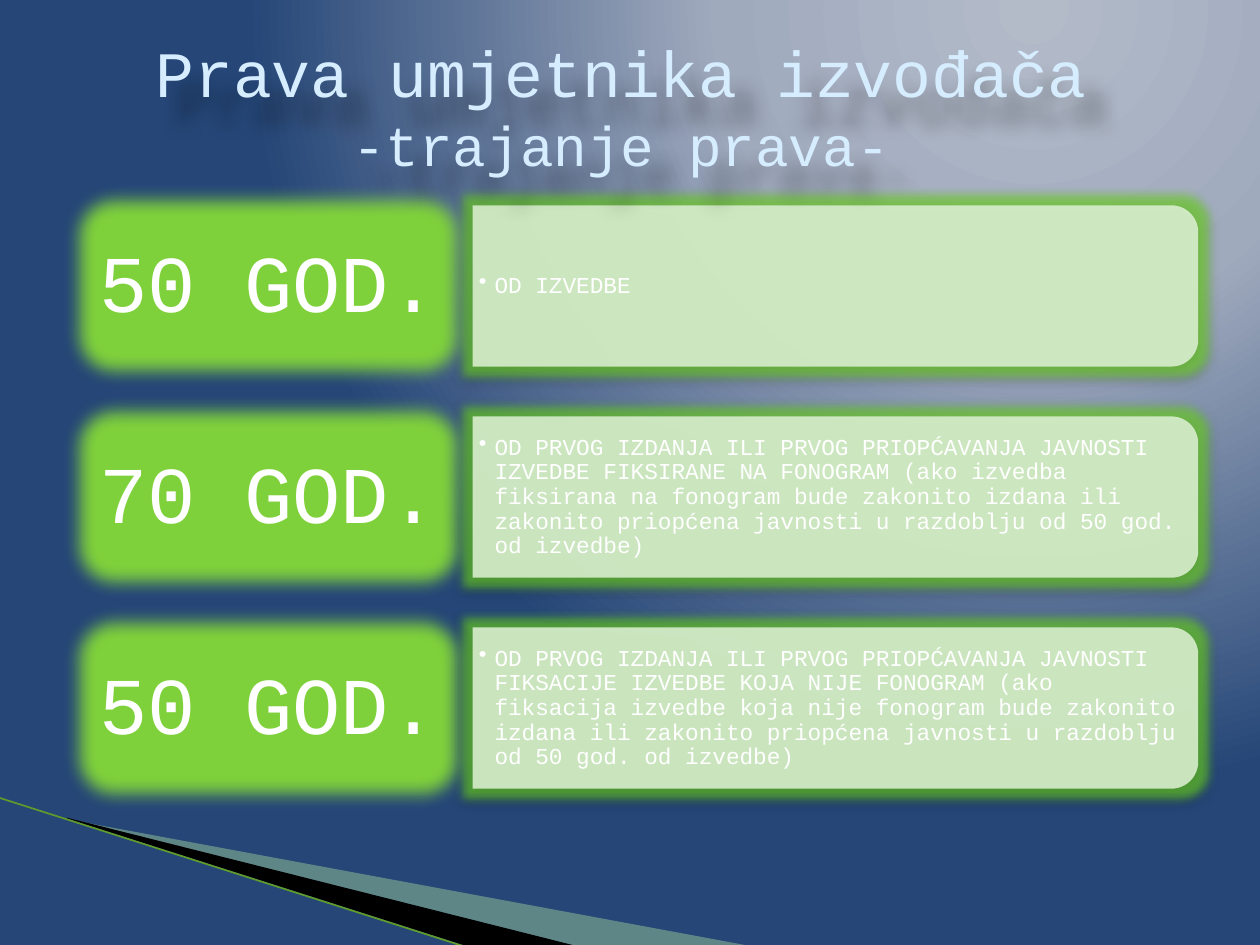
"""Build the slide on how long performers' rights last."""
from pptx import Presentation
from pptx.dml.color import RGBColor
from pptx.enum.shapes import MSO_CONNECTOR, MSO_SHAPE
from pptx.enum.text import MSO_ANCHOR, MSO_AUTO_SIZE, PP_ALIGN
from pptx.oxml import parse_xml
from pptx.oxml.ns import nsdecls, qn
from pptx.util import Pt

TITLE = [("Prava umjetnika izvođača", 37), ("-trajanje prava-", 32)]
TERMS = [
    ("50 GOD.", "OD IZVEDBE"),
    ("70 GOD.", "OD PRVOG IZDANJA ILI PRVOG PRIOPĆAVANJA JAVNOSTI IZVEDBE "
     "FIKSIRANE NA FONOGRAM (ako izvedba fiksirana na fonogram bude zakonito "
     "izdana ili zakonito priopćena javnosti u razdoblju od 50 god. od izvedbe)"),
    ("50 GOD.", "OD PRVOG IZDANJA ILI PRVOG PRIOPĆAVANJA JAVNOSTI FIKSACIJE "
     "IZVEDBE KOJA NIJE FONOGRAM (ako fiksacija izvedbe koja nije fonogram bude "
     "zakonito izdana ili zakonito priopćena javnosti u razdoblju od 50 god. od izvedbe)"),
]
BACKGROUND_STOPS = [(0, "B3BBC9"), (40, "A0AABD"), (100, "254677")]
WEDGES = [
    ([(39.6, 468.4), (428.4, 540.5), (328.3, 540.5), (39.6, 468)], "B8E7A1", 40),
    ([(38.2, 467.3), (329, 540.5), (267.8, 541), (38.9, 468)], "000000", 100),
]
FONT = "Courier New"
WHITE, GREEN = "FFFFFF", "7FD13B"
ROW_TOP, ROW_PITCH, ROW_HEIGHT = 105.8, 120.6, 115.2
LABEL_LEFT, LABEL_WIDTH, LABEL_INSET = 36.7, 233.3, 5.6
PANEL_WIDTH, PANEL_HEIGHT = 414.7, 92.2
PANEL_LEFT = LABEL_LEFT + LABEL_WIDTH


def color(value):
    return RGBColor.from_string(value)


def points(*values):
    return [Pt(value) for value in values]


def assign(target, values):
    for name, value in values.items():
        setattr(target, name, value)


def set_font(font, size, value=WHITE):
    assign(font, {"name": FONT, "size": Pt(size), "bold": False})
    font.color.rgb = color(value)


def paint(shape, value, opacity=100):
    shape.shadow.inherit = False
    shape.fill.solid()
    shape.fill.fore_color.rgb = color(value)
    shape.line.fill.background()
    if opacity < 100:
        shape._element.spPr.find(".//" + qn("a:srgbClr")).append(
            parse_xml(f'<a:alpha {nsdecls("a")} val="{opacity * 1000}"/>'))


def set_effects(shape, content=""):
    properties = shape._element.spPr
    for effects in properties.findall(qn("a:effectLst")):
        properties.remove(effects)
    properties.append(parse_xml(
        f'<a:effectLst {nsdecls("a")}>{content}</a:effectLst>'))


def shadow(blur, distance, angle, opacity):
    return (f'<a:outerShdw blurRad="{Pt(blur)}" dist="{Pt(distance)}" '
            f'dir="{angle * 60000}" algn="ctr" rotWithShape="0"><a:srgbClr val="000000">'
            f'<a:alpha val="{opacity * 1000}"/></a:srgbClr></a:outerShdw>')


def glow(radius, value, opacity):
    return (f'<a:glow rad="{Pt(radius)}"><a:srgbClr val="{value}">'
            f'<a:alpha val="{opacity * 1000}"/></a:srgbClr></a:glow>')


def add_background(slide):
    stops = "".join(f'<a:gs pos="{position * 1000}"><a:srgbClr val="{value}"/></a:gs>'
                    for position, value in BACKGROUND_STOPS)
    slide._element.cSld.insert(0, parse_xml(
        f'<p:bg {nsdecls("p", "a")}><p:bgPr><a:gradFill rotWithShape="1">'
        f'<a:gsLst>{stops}</a:gsLst><a:path path="circle">'
        '<a:fillToRect l="65000" t="0" r="0" b="98000"/></a:path></a:gradFill>'
        '<a:effectLst/></p:bgPr></p:bg>'))


def add_corner(slide):
    for corners, value, opacity in WEDGES:
        start, *rest = [points(*corner) for corner in corners]
        builder = slide.shapes.build_freeform(*start)
        builder.add_line_segments(rest)
        paint(builder.convert_to_shape(), value, opacity)
    edge = slide.shapes.add_connector(
        MSO_CONNECTOR.STRAIGHT, *points(-0.7, 455.8, 267.1, 541.4))
    edge.line.color.rgb = color("5F9C2C")
    edge.line.width = Pt(0.95)
    set_effects(edge)


def add_text(slide, text, box, margins, size, alignment, bullet=False):
    frame = slide.shapes.add_textbox(*points(*box)).text_frame
    horizontal, vertical = points(*margins)
    assign(frame, {"word_wrap": True, "vertical_anchor": MSO_ANCHOR.MIDDLE,
                   "margin_left": horizontal, "margin_right": horizontal,
                   "margin_top": vertical, "margin_bottom": vertical})
    paragraph = frame.paragraphs[0]
    assign(paragraph, {"text": text, "alignment": alignment, "line_spacing": 0.9})
    if bullet:
        properties = paragraph._p.get_or_add_pPr()
        properties.set("marL", str(Pt(9)))
        properties.set("indent", str(Pt(-9)))
        properties.append(parse_xml(f'<a:buChar {nsdecls("a")} char="•"/>'))
    set_font(paragraph.runs[0].font, size)


def add_term(slide, top, label, description):
    panel_top = top + (ROW_HEIGHT - PANEL_HEIGHT) / 2
    turn = (PANEL_WIDTH - PANEL_HEIGHT) / 2
    panel = slide.shapes.add_shape(MSO_SHAPE.ROUND_2_SAME_RECTANGLE, *points(
        PANEL_LEFT + turn, panel_top - turn, PANEL_HEIGHT, PANEL_WIDTH))
    panel.rotation = 90
    paint(panel, "D8EECE", 90)
    set_effects(panel, glow(11, "70DD1E", 60) + shadow(3.5, 2.2, 90, 32))
    add_text(slide, description, (PANEL_LEFT, panel_top + 4.5, 410.4, 83.2),
             (3.6, 1.8), 13, PP_ALIGN.LEFT, bullet=True)

    tile = slide.shapes.add_shape(MSO_SHAPE.ROUNDED_RECTANGLE, *points(
        LABEL_LEFT, top, LABEL_WIDTH, ROW_HEIGHT))
    paint(tile, GREEN)
    tile.line.color.rgb = color(WHITE)
    tile.line.width = Pt(1.5)
    set_effects(tile, f'<a:softEdge rad="{Pt(10)}"/>')
    box = (LABEL_LEFT + LABEL_INSET, top + LABEL_INSET,
           LABEL_WIDTH - 2 * LABEL_INSET, ROW_HEIGHT - 2 * LABEL_INSET)
    add_text(slide, label, box, (13, 7), 46, PP_ALIGN.CENTER)


def add_title(slide):
    title = slide.shapes.title
    left, top, width, height = points(31, 15, 648, 90)
    assign(title, {"left": left, "top": top, "width": width, "height": height})
    assign(title.text_frame, {"vertical_anchor": MSO_ANCHOR.MIDDLE,
                              "word_wrap": True, "auto_size": MSO_AUTO_SIZE.NONE})
    paragraph = title.text_frame.paragraphs[0]
    paragraph.alignment = PP_ALIGN.CENTER
    for index, (text, size) in enumerate(TITLE):
        if index:
            paragraph.add_line_break()
        run = paragraph.add_run()
        run.text = text
        set_font(run.font, size, "D6ECFF")
    set_effects(title, shadow(10, 19, 53, 35))
    title._element.getparent().append(title._element)


def main():
    presentation = Presentation()
    presentation.slide_width, presentation.slide_height = points(720, 540)
    slide = presentation.slides.add_slide(presentation.slide_layouts[5])
    add_background(slide)
    add_corner(slide)
    for index, (label, description) in enumerate(TERMS):
        add_term(slide, ROW_TOP + index * ROW_PITCH, label, description)
    add_title(slide)
    presentation.save("out.pptx")


if __name__ == "__main__":
    main()
